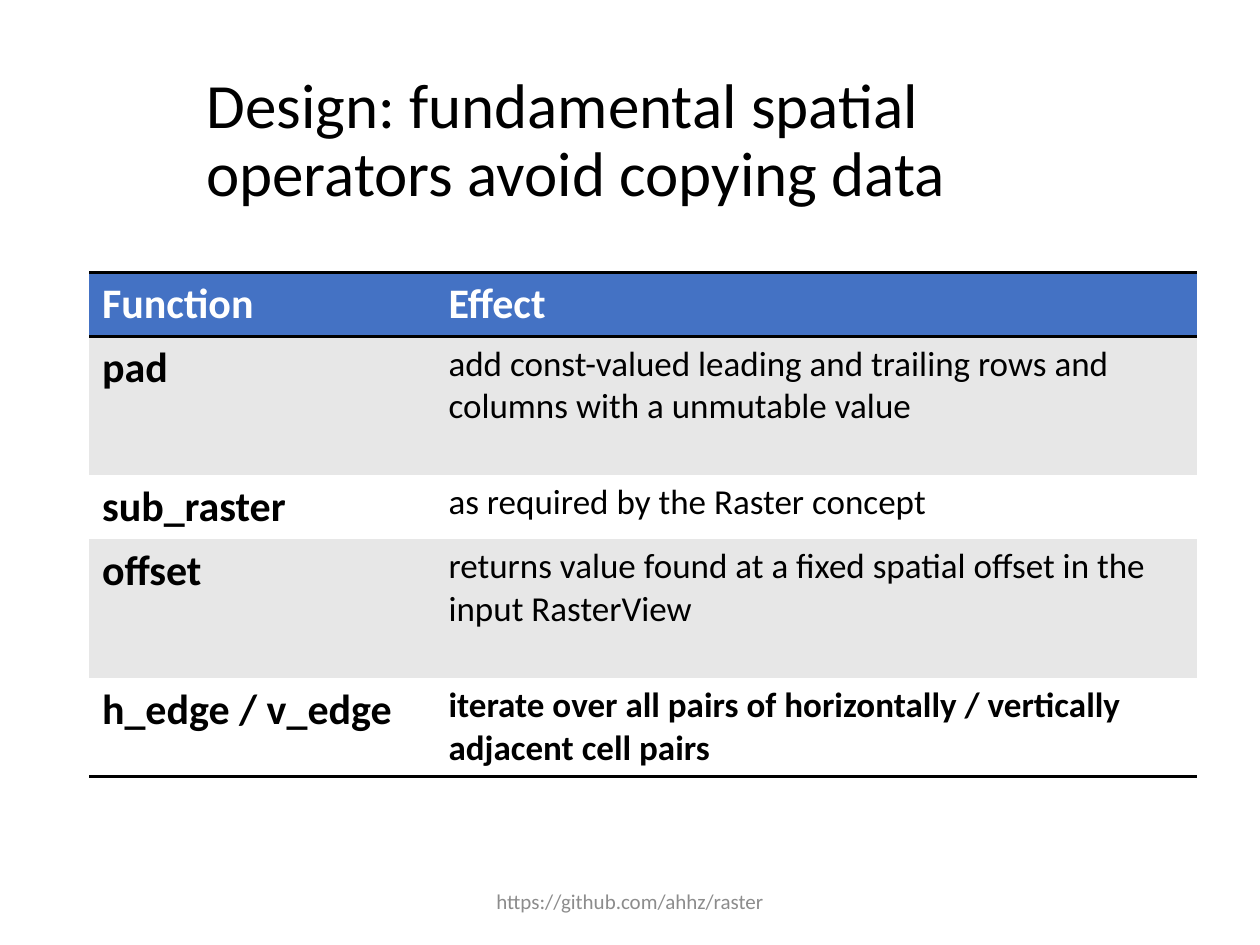
from dataclasses import dataclass

from lxml.etree import SubElement
from pptx import Presentation
from pptx.dml.color import RGBColor
from pptx.enum.text import MSO_ANCHOR, PP_ALIGN
from pptx.oxml.ns import qn
from pptx.slide import Slide
from pptx.util import Inches, Pt

GRID = 0.1  # inches per grid unit: the slide is 100 columns by 75 rows
BLACK, WHITE, GREY, BAND, HEADER = "000000", "FFFFFF", "8C8C8C", "E7E7E7", "4472C4"

FUNCTIONS = [
    ("Function", "Effect"),
    ("pad", "add const-valued leading and trailing rows and columns with a unmutable value"),
    ("sub_raster", "as required by the Raster concept"),
    ("offset", "returns value found at a fixed spatial offset in the input RasterView"),
    ("h_edge / v_edge", "iterate over all pairs of horizontally / vertically adjacent cell pairs"),
]
COLUMN_WIDTHS = [27.5, 60.4]
ROW_HEIGHTS = [5.1, 11, 5.1, 11, 7.8]


def color(hex_string):
    return RGBColor.from_string(hex_string)


def units(value):
    return Inches(value * GRID)


@dataclass
class SlideBuilder:
    slide: Slide
    font: str = "Calibri"
    rule_width: float = 2

    def add_text(self, paragraph, text, hex_color, **formats):
        run = paragraph.add_run()
        run.text = text
        run.font.color.rgb = color(hex_color)
        for name, value in {"name": self.font, **formats}.items():
            setattr(run.font, name, value)

    def text_box(self, left, top, width, height, text, hex_color, size, **layout):
        box = self.slide.shapes.add_textbox(*map(units, (left, top, width, height)))
        frame = box.text_frame
        frame.word_wrap = True
        frame.vertical_anchor = MSO_ANCHOR.MIDDLE
        paragraph = frame.paragraphs[0]
        for name, value in layout.items():
            setattr(paragraph, name, value)
        self.add_text(paragraph, text, hex_color, size=Pt(size))

    def borders(self, cell, ruled_sides):
        """Rule the given sides (T, B) in black and clear the others."""
        properties = cell._tc.get_or_add_tcPr()
        for side in "LRTB":
            line = SubElement(properties, qn(f"a:ln{side}"))
            if side in ruled_sides:
                line.set("w", str(Pt(self.rule_width)))
                fill = SubElement(line, qn("a:solidFill"))
                SubElement(fill, qn("a:srgbClr"), val=BLACK)
            else:
                SubElement(line, qn("a:noFill"))

    def table(self, left, top, rows, widths, heights):
        """Draw a banded table with a header, ruled around the header and at the foot."""
        table = self.slide.shapes.add_table(
            len(rows), len(widths),
            *map(units, (left, top, sum(widths), sum(heights)))).table
        table.first_row = table.horz_banding = False
        for column, width in zip(table.columns, widths):
            column.width = units(width)
        for row, height in zip(table.rows, heights):
            row.height = units(height)

        last = len(rows) - 1
        ruled_sides = {0: "TB", 1: "T", last: "B"}
        for row_index, texts in enumerate(rows):
            header = row_index == 0
            band = HEADER if header else BAND if row_index % 2 else WHITE
            for column_index, text in enumerate(texts):
                cell = table.cell(row_index, column_index)
                self.borders(cell, ruled_sides.get(row_index, ""))
                cell.fill.solid()
                cell.fill.fore_color.rgb = color(band)
                label = header or column_index == 0
                self.add_text(cell.text_frame.paragraphs[0], text,
                              WHITE if header else BLACK,
                              size=Pt(24 if label else 20),
                              bold=label or row_index == last)


def main():
    presentation = Presentation()
    presentation.slide_width = units(100)
    presentation.slide_height = units(75)
    builder = SlideBuilder(presentation.slides.add_slide(presentation.slide_layouts[6]))

    builder.text_box(15.4, 4, 77.7, 14.5,
                     "Design: fundamental spatial operators avoid copying data",
                     BLACK, 36, line_spacing=0.9)
    builder.text_box(33.1, 69.5, 33.8, 4, "https://github.com/ahhz/raster",
                     GREY, 12, alignment=PP_ALIGN.CENTER)
    builder.table(7.1, 21.6, FUNCTIONS, COLUMN_WIDTHS, ROW_HEIGHTS)

    presentation.save("out.pptx")


if __name__ == "__main__":
    main()
